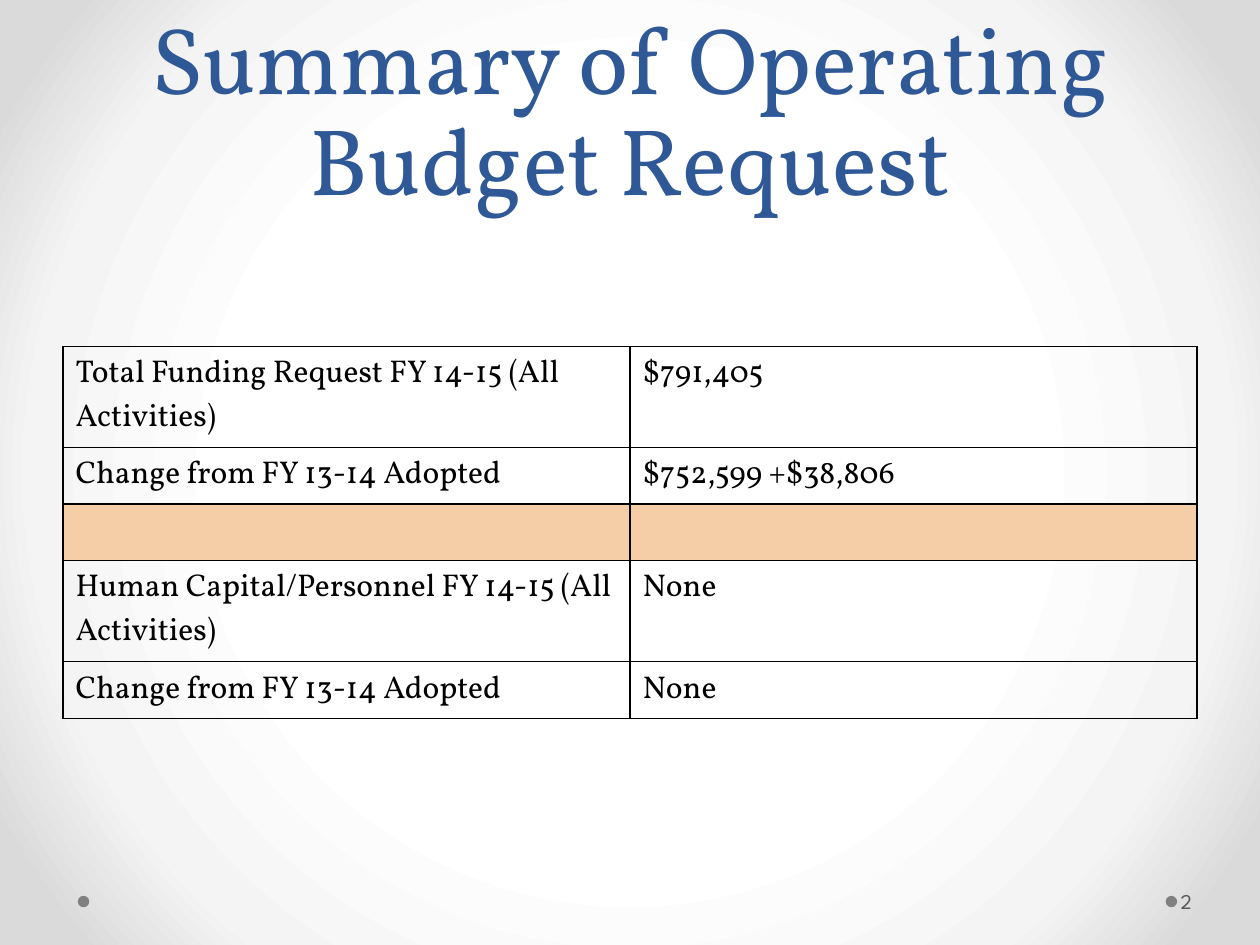
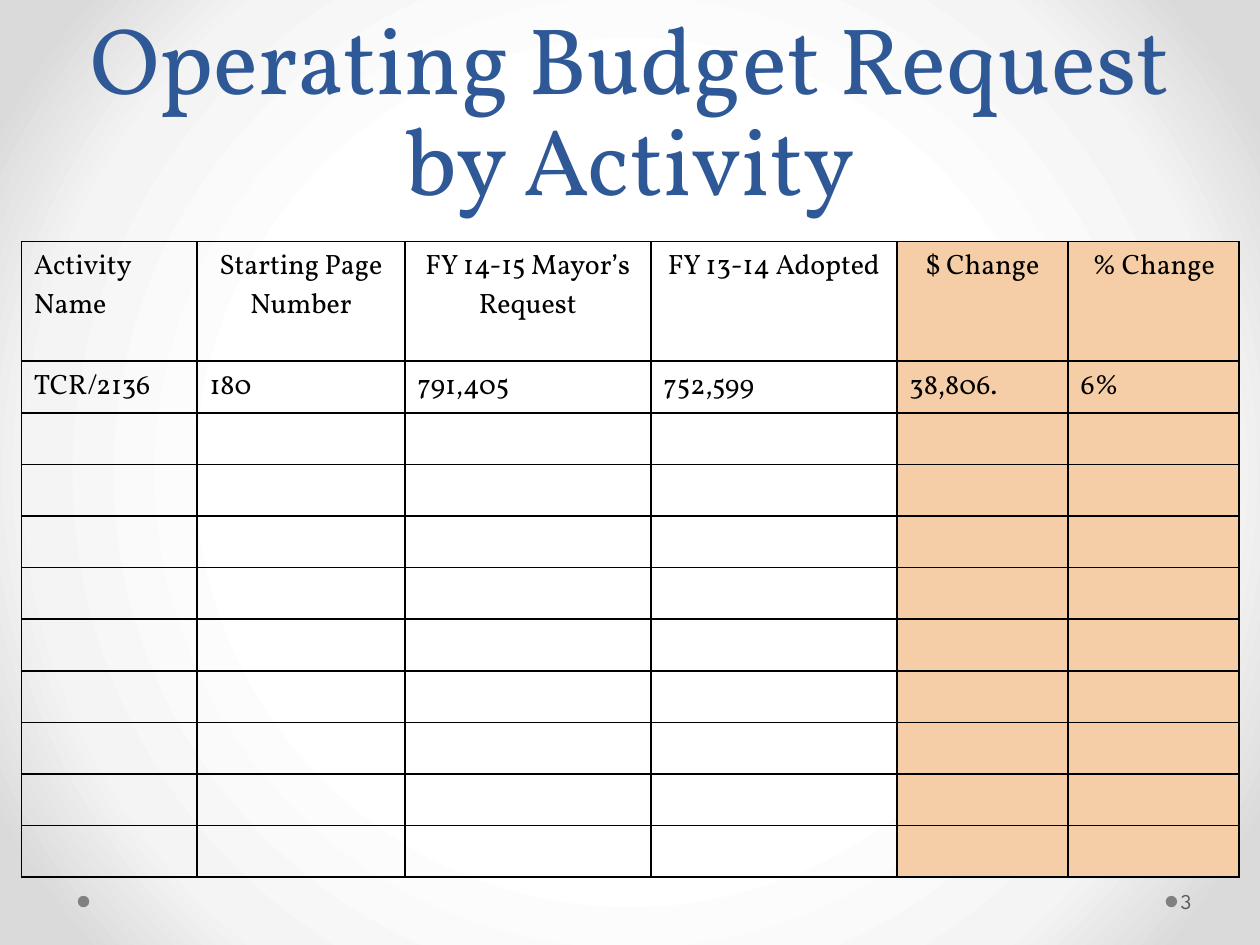
"""Build the two operating budget request slides."""
from dataclasses import dataclass

from pptx import Presentation
from pptx import oxml
from pptx import slide as sl
from pptx import util as u
from pptx.dml import color
from pptx.enum import shapes, text
from pptx.oxml import ns
from pptx.table import _Cell as Cell
from pptx.text import text as t

COLORS = {
    "title": "2F5897",
    "body": "000000",
    "accent": "F5CEA7",
    "dot": "808080",
    "number": "595959",
}
BACKGROUND_STOPS = {50: "FFFFFF", 76: "F4F4F4", 92: "DADADA"}
SERIF, SANS = "Vollkorn", "League Spartan"
DOT_LEFTS = (23.5, 1.57)


@dataclass(frozen=True)
class BudgetTable:
    """A bordered table with shaded rows or columns, lengths in centimetres."""

    left: float
    top: float
    columns: tuple[float, ...]
    rows: tuple[float, ...]
    texts: tuple[tuple[str, ...], ...]
    size: int
    shaded_rows: tuple[int, ...] = ()
    shaded_columns: tuple[int, ...] = ()
    centered_header: bool = False


@dataclass(frozen=True)
class BudgetSlide:
    """The title, page number and table of one slide."""

    title: str
    number: int
    table: BudgetTable


SLIDES = (
    BudgetSlide("Summary of Operating Budget Request", 2, BudgetTable(
        left=1.27, top=6.98,
        columns=(11.43,) * 2,
        rows=(2.04, 1.14, 1.14, 2.04, 1.14),
        texts=(
            ("Total Funding Request FY 14-15 (All Activities)", "$791,405"),
            ("Change from FY 13-14 Adopted", "$752,599 +$38,806"),
            (),
            ("Human Capital/Personnel FY 14-15 (All Activities)", "None"),
            ("Change from FY 13-14 Adopted", "None"),
        ),
        size=18,
        shaded_rows=(2,),
    )),
    BudgetSlide("Operating Budget Request by Activity", 3, BudgetTable(
        left=0.43, top=4.87,
        columns=(3.54, 4.19, 4.96, 4.96, 3.45, 3.45),
        rows=(2.41,) + (1.04,) * 10,
        texts=(
            ("Activity Name", "Starting Page Number", "FY 14-15 Mayor’s Request",
             "FY 13-14 Adopted", "$ Change", "% Change"),
            ("TCR/2136", "180", "791,405", "752,599", "38,806.", "6%"),
        ),
        size=16,
        shaded_columns=(4, 5),
        centered_header=True,
    )),
)


def rgb(name: str) -> color.RGBColor:
    """Look up a named colour."""
    return color.RGBColor.from_string(COLORS[name])


def add_run(paragraph: t._Paragraph, words: str, font: str, size: int, color_name: str) -> None:
    """Add one formatted run to a paragraph."""
    run = paragraph.add_run()
    run.text = words
    run.font.name = font
    run.font.size = u.Pt(size)
    run.font.color.rgb = rgb(color_name)


def set_background(master: sl.SlideMaster) -> None:
    """Give the master a radial gradient that darkens towards the corners."""
    master.background.fill.gradient()
    gradient = master.element.xpath("p:cSld/p:bg/p:bgPr/a:gradFill")[0]
    stops = "".join(
        f'<a:gs pos="{position * 1000}"><a:srgbClr val="{value}"/></a:gs>'
        for position, value in BACKGROUND_STOPS.items()
    )
    radial = oxml.parse_xml(
        f'<a:gradFill {ns.nsdecls("a")} rotWithShape="1"><a:gsLst>{stops}</a:gsLst>'
        '<a:path path="circle"><a:fillToRect l="50000" t="50000" r="50000" b="50000"/>'
        "</a:path></a:gradFill>"
    )
    gradient.getparent().replace(gradient, radial)


def add_title(slide: sl.Slide, words: str) -> None:
    """Place and format the title placeholder."""
    title = slide.shapes.title
    title.left, title.top = u.Cm(1.27), u.Cm(0)
    title.width, title.height = u.Cm(22.86), u.Cm(4.45)
    frame = title.text_frame
    frame.word_wrap = True
    frame.auto_size = text.MSO_AUTO_SIZE.NONE
    frame.vertical_anchor = text.MSO_ANCHOR.BOTTOM
    paragraph = frame.paragraphs[0]
    paragraph.alignment = text.PP_ALIGN.CENTER
    paragraph.line_spacing = u.Pt(58)
    add_run(paragraph, words, SERIF, 54, "title")


def add_footer(slide: sl.Slide, number: int) -> None:
    """Draw the footer dots and the page number."""
    for left in DOT_LEFTS:
        dot = slide.shapes.add_shape(
            shapes.MSO_SHAPE.OVAL, u.Cm(left), u.Cm(18.06), u.Cm(0.23), u.Cm(0.23))
        dot.shadow.inherit = False
        dot.fill.solid()
        dot.fill.fore_color.rgb = rgb("dot")
        dot.line.fill.background()
    box = slide.shapes.add_textbox(u.Cm(23.72), u.Cm(17.65), u.Cm(1.55), u.Cm(1.02))
    frame = box.text_frame
    frame.word_wrap = True
    frame.vertical_anchor = text.MSO_ANCHOR.MIDDLE
    frame.margin_left = u.Cm(0.08)
    frame.margin_right = frame.margin_top = frame.margin_bottom = u.Cm(0.13)
    add_run(frame.paragraphs[0], str(number), SANS, 12, "number")


def format_cell(cell: Cell, shaded: bool) -> None:
    """Set the fill and the four borders of a cell."""
    if shaded:
        cell.fill.solid()
        cell.fill.fore_color.rgb = rgb("accent")
    else:
        cell.fill.background()
    properties = cell._tc.get_or_add_tcPr()
    for index, side in enumerate("LRTB"):
        properties.insert(index, oxml.parse_xml(
            f'<a:ln{side} {ns.nsdecls("a")} w="{u.Pt(1)}"><a:solidFill>'
            f'<a:srgbClr val="{COLORS["body"]}"/></a:solidFill></a:ln{side}>'))


def add_budget_table(slide: sl.Slide, budget: BudgetTable) -> None:
    """Add a table and fill its cells."""
    table = slide.shapes.add_table(
        len(budget.rows), len(budget.columns), u.Cm(budget.left), u.Cm(budget.top),
        u.Cm(sum(budget.columns)), u.Cm(sum(budget.rows))).table
    table.first_row = table.horz_banding = False
    for column, width in zip(table.columns, budget.columns):
        column.width = u.Cm(width)
    for row_index, (row, height) in enumerate(zip(table.rows, budget.rows)):
        row.height = u.Cm(height)
        for column_index, cell in enumerate(row.cells):
            format_cell(cell, row_index in budget.shaded_rows
                        or column_index in budget.shaded_columns)
    for row_index, words_in_row in enumerate(budget.texts):
        for column_index, words in enumerate(words_in_row):
            paragraph = table.cell(row_index, column_index).text_frame.paragraphs[0]
            if budget.centered_header and row_index == 0 and column_index > 0:
                paragraph.alignment = text.PP_ALIGN.CENTER
            add_run(paragraph, words, SERIF, budget.size, "body")


def main() -> None:
    """Build and save the presentation."""
    presentation = Presentation()
    presentation.slide_width, presentation.slide_height = u.Cm(25.4), u.Cm(19.05)
    set_background(presentation.slide_master)
    title_only = presentation.slide_layouts.get_by_name("Title Only")
    for content in SLIDES:
        slide = presentation.slides.add_slide(title_only)
        add_title(slide, content.title)
        add_budget_table(slide, content.table)
        add_footer(slide, content.number)
    presentation.save("out.pptx")


if __name__ == "__main__":
    main()
